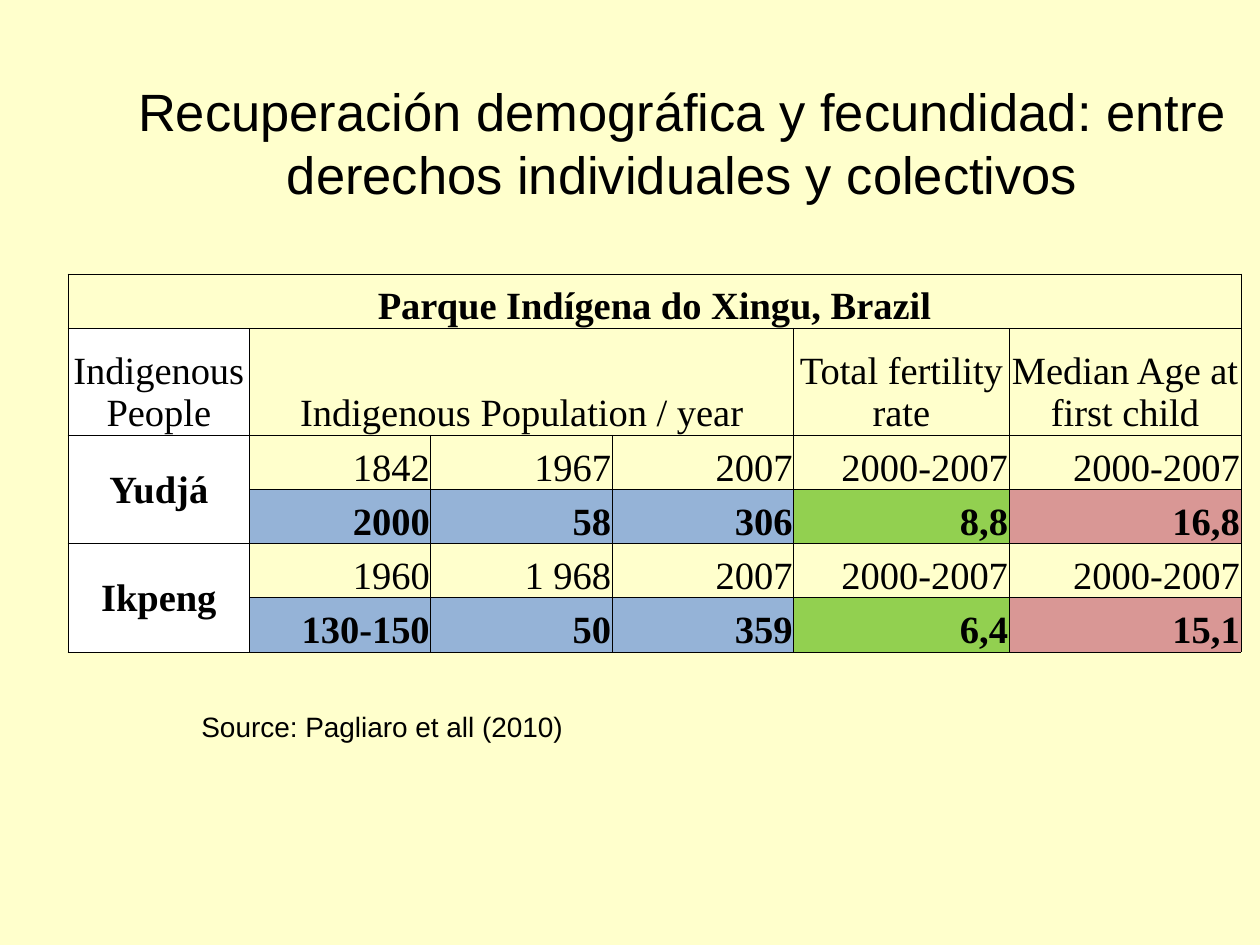
"""Build the slide on demographic recovery and fertility in the Xingu park."""
from dataclasses import dataclass
from typing import Optional

from lxml import etree
from pptx import Presentation
from pptx import util as u
from pptx.dml.color import RGBColor
from pptx.enum import text as t
from pptx.oxml import ns


@dataclass(frozen=True)
class Theme:
    background: str = "FFFFCC"
    ink: str = "000000"
    people: str = "FFFFFF"
    population: str = "95B3D7"
    fertility: str = "92D050"
    age: str = "D99795"
    sans: str = "Arial"
    serif: str = "Times New Roman"
    title_size: int = 30
    table_size: int = 22
    source_size: int = 16
    border: float = 0.5


@dataclass(frozen=True)
class Box:
    left: float
    top: float
    width: float
    height: float


@dataclass(frozen=True)
class Cell:
    row: int
    col: int
    text: str
    rows: int = 1
    cols: int = 1
    fill: Optional[str] = None
    bold: bool = False
    align: t.PP_ALIGN = t.PP_ALIGN.CENTER
    anchor: t.MSO_ANCHOR = t.MSO_ANCHOR.BOTTOM


@dataclass(frozen=True)
class People:
    name: str
    years: tuple
    values: tuple


THEME = Theme()
WIDTH, HEIGHT = u.Inches(10), u.Inches(7.5)
TITLE = Box(0.083, 0.067, 0.917, 0.167)
TABLE = Box(0.054, 0.29, 0.929, 0.4)
SOURCE = Box(0.15, 0.744, 0.488, 0.049)
COLUMNS = (1.44, 1.44, 1.44, 1.44, 1.71, 1.84)
ROWS = (0.43, 0.85, 0.43, 0.43, 0.43, 0.43)
VALUE_FILLS = (THEME.population,) * 3 + (THEME.fertility, THEME.age)
PERIOD = "2000-2007"
PEOPLES = (
    People("Yudjá", ("1842", "1967", "2007", PERIOD, PERIOD),
           ("2000", "58", "306", "8,8", "16,8")),
    People("Ikpeng", ("1960", "1 968", "2007", PERIOD, PERIOD),
           ("130-150", "50", "359", "6,4", "15,1")),
)
HEADERS = [
    Cell(0, 0, "Parque Indígena do Xingu, Brazil", cols=6, bold=True),
    Cell(1, 0, "Indigenous People", fill=THEME.people),
    Cell(1, 1, "Indigenous Population / year", cols=3),
    Cell(1, 4, "Total fertility rate"),
    Cell(1, 5, "Median Age at first child"),
]


def place(box: Box) -> tuple:
    """Turn shares of the slide into lengths."""
    return (int(box.left * WIDTH), int(box.top * HEIGHT),
            int(box.width * WIDTH), int(box.height * HEIGHT))


def write(tf, text: str, *, size: int, font: str, bold: bool = False,
          align: t.PP_ALIGN = t.PP_ALIGN.LEFT) -> None:
    """Write one formatted paragraph into a text frame."""
    p = tf.paragraphs[0]
    p.alignment = align
    r = p.add_run()
    r.text = text
    r.font.size = u.Pt(size)
    r.font.name = font
    r.font.bold = bold
    r.font.color.rgb = RGBColor.from_string(THEME.ink)


def add_borders(cell) -> None:
    """Draw a thin line on each side of a table cell."""
    tc_pr = cell._tc.get_or_add_tcPr()
    for side in ("lnL", "lnR", "lnT", "lnB"):
        ln = etree.SubElement(tc_pr, ns.qn(f"a:{side}"), w=str(u.Pt(THEME.border)))
        fill = etree.SubElement(ln, ns.qn("a:solidFill"))
        etree.SubElement(fill, ns.qn("a:srgbClr"), val=THEME.ink)


def people_cells(people: People, row: int) -> list:
    """List the name, year and value cells of one people."""
    cells = [Cell(row, 0, people.name, rows=2, fill=THEME.people, bold=True,
                  anchor=t.MSO_ANCHOR.MIDDLE)]
    columns = zip(people.years, people.values, VALUE_FILLS)
    for col, (year, value, fill) in enumerate(columns, 1):
        cells.append(Cell(row, col, year, align=t.PP_ALIGN.RIGHT))
        cells.append(Cell(row + 1, col, value, fill=fill, bold=True,
                          align=t.PP_ALIGN.RIGHT))
    return cells


def fill_cell(table, item: Cell) -> None:
    """Merge, colour and write one table cell."""
    cell = table.cell(item.row, item.col)
    if item.rows * item.cols > 1:
        cell.merge(table.cell(item.row + item.rows - 1, item.col + item.cols - 1))
    if item.fill:
        cell.fill.solid()
        cell.fill.fore_color.rgb = RGBColor.from_string(item.fill)
    cell.vertical_anchor = item.anchor
    write(cell.text_frame, item.text, size=THEME.table_size, font=THEME.serif,
          bold=item.bold, align=item.align)


def add_population_table(s) -> None:
    """Add the table of populations, fertility and age."""
    table = s.shapes.add_table(len(ROWS), len(COLUMNS), *place(TABLE)).table
    table.first_row = table.horz_banding = False
    for column, width in zip(table.columns, COLUMNS):
        column.width = u.Inches(width)
    for row, height in zip(table.rows, ROWS):
        row.height = u.Inches(height)
    for cell in table.iter_cells():
        cell.margin_left = cell.margin_right = cell.margin_top = u.Inches(0.01)
        cell.margin_bottom = 0
        add_borders(cell)
        cell.fill.background()
    items = list(HEADERS)
    for i, people in enumerate(PEOPLES):
        items += people_cells(people, 2 + 2 * i)
    for item in items:
        fill_cell(table, item)


def main() -> None:
    """Build and save the slide."""
    prs = Presentation()
    prs.slide_width, prs.slide_height = WIDTH, HEIGHT
    s = prs.slides.add_slide(prs.slide_layouts[5])
    s.background.fill.solid()
    s.background.fill.fore_color.rgb = RGBColor.from_string(THEME.background)

    title = s.shapes.title
    title.left, title.top, title.width, title.height = place(TITLE)
    tf = title.text_frame
    tf.auto_size = t.MSO_AUTO_SIZE.NONE
    tf.vertical_anchor = t.MSO_ANCHOR.MIDDLE
    write(tf, "Recuperación demográfica y fecundidad: entre derechos "
          "individuales y colectivos", size=THEME.title_size, font=THEME.sans,
          align=t.PP_ALIGN.CENTER)

    add_population_table(s)

    tf = s.shapes.add_textbox(*place(SOURCE)).text_frame
    tf.word_wrap = True
    tf.auto_size = t.MSO_AUTO_SIZE.SHAPE_TO_FIT_TEXT
    write(tf, "Source: Pagliaro et all (2010)", size=THEME.source_size,
          font=THEME.sans)
    prs.save("out.pptx")


if __name__ == "__main__":
    main()
